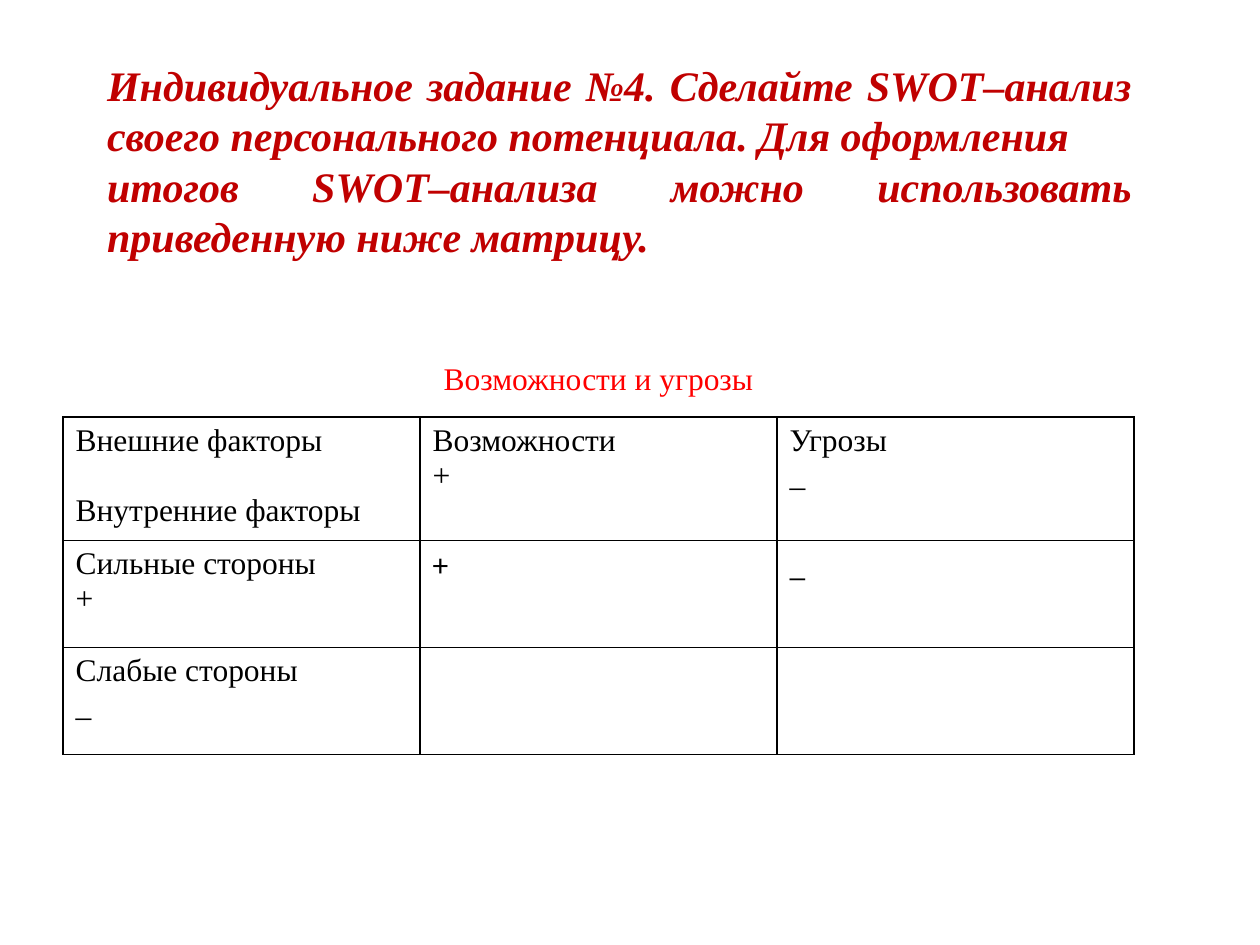
import pptx
import pptx.util
import pptx.dml.color
import pptx.enum.text
import pptx.oxml
import pptx.oxml.ns
import lxml.etree

Inches, Pt = pptx.util.Inches, pptx.util.Pt
ALIGN = pptx.enum.text.PP_ALIGN
THEME = {
    "serif": "Times New Roman", "sans": "Calibri",
    "title": "C00000", "heading": "FF0000", "text": "000000", "border": "000000",
    "title_size": 24, "table_size": 18, "border_width": 1,
}


def style(p, size, color, font=THEME["serif"], align=None):
    p.font.size, p.font.name = Pt(size), font
    p.font.color.rgb = pptx.dml.color.RGBColor.from_string(color)
    p.alignment = align


def set_borders(cell, sides):
    tcPr = cell._tc.get_or_add_tcPr()
    for side in sides:
        ln = lxml.etree.SubElement(tcPr, pptx.oxml.ns.qn(f"a:ln{side}"),
                                   w=str(Pt(THEME["border_width"])))
        fill = lxml.etree.SubElement(ln, pptx.oxml.ns.qn("a:solidFill"))
        lxml.etree.SubElement(fill, pptx.oxml.ns.qn("a:srgbClr"), val=THEME["border"])


prs = pptx.Presentation()
prs.slide_width, prs.slide_height = Inches(10), Inches(7.5)
s = prs.slides.add_slide(prs.slide_layouts[5])

title = s.shapes.title
title.left, title.top, title.width, title.height = map(Inches, (0.75, 0.42, 8.33, 1.72))
tf = title.text_frame
tf.text = (
    "Индивидуальное задание №4. Сделайте SWOT–анализ своего персонального потенциала. Для оформления\n"
    "итогов SWOT–анализа можно использовать приведенную ниже матрицу."
)
tf.word_wrap = True
tf.auto_size = pptx.enum.text.MSO_AUTO_SIZE.SHAPE_TO_FIT_TEXT
tf.vertical_anchor = pptx.enum.text.MSO_ANCHOR.TOP
for p in tf.paragraphs:
    style(p, THEME["title_size"], THEME["title"], align=ALIGN.JUSTIFY)
    p.font.bold = p.font.italic = True

matrix = [
    ["Возможности и угрозы", "", ""],
    ["Внешние факторы\nВнутренние факторы", "Возможности\n+", "Угрозы\n_"],
    ["Сильные стороны\n+", "+", "_"],
    ["Слабые стороны\n_", "", ""],
]
row_heights = [0.48, 0.89, 0.85, 0.85]
table = s.shapes.add_table(len(matrix), 3, Inches(0.5), Inches(2.83),
                           Inches(8.5), Inches(sum(row_heights))).table
table.first_row = table.horz_banding = False
for row, height in zip(table.rows, row_heights):
    row.height = Inches(height)
table.cell(0, 0).merge(table.cell(0, 2))

for i, texts in enumerate(matrix):
    for j, text in enumerate(texts):
        cell = table.cell(i, j)
        set_borders(cell, "LRTB" if i else "B")
        cell.fill.background()
        cell.text = text
        font = THEME["sans"] if i == 2 and j else THEME["serif"]
        for p in cell.text_frame.paragraphs:
            style(p, THEME["table_size"], THEME["text"] if i else THEME["heading"],
                  font, None if i else ALIGN.CENTER)

table.cell(1, 0).text_frame.paragraphs[1].space_before = Pt(20)

prs.save("out.pptx")
